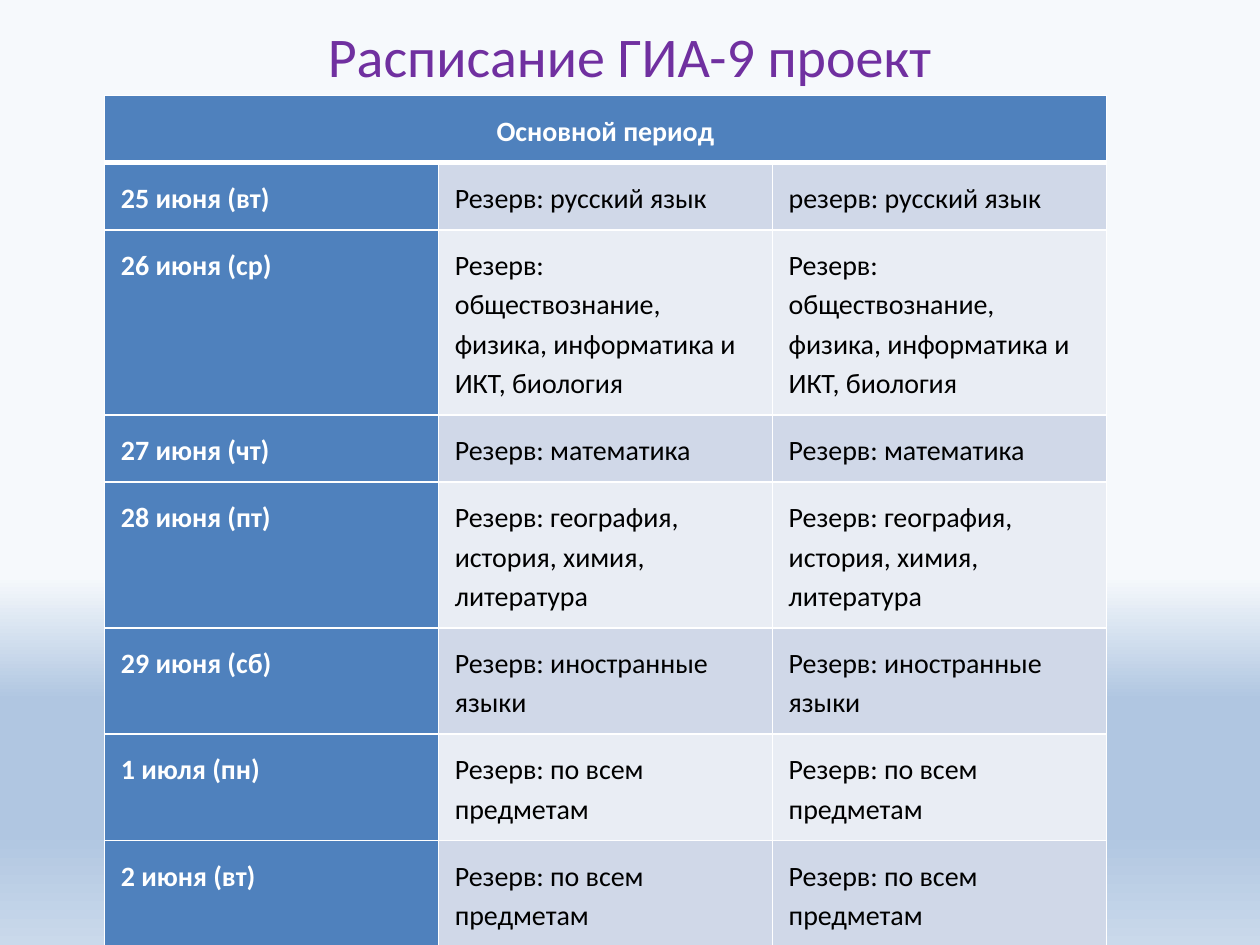
from lxml.etree import SubElement
from pptx import Presentation
from pptx.dml.color import RGBColor
from pptx.enum.text import MSO_ANCHOR, PP_ALIGN
from pptx.oxml import parse_xml
from pptx.oxml.ns import nsdecls, qn
from pptx.util import Inches, Pt

BLUE, WHITE, BLACK, PURPLE = "4F81BD", "FFFFFF", "000000", "7030A0"
BANDS = ["D0D8E8", "E9EDF4"]
GRADIENT = [(61, "F6F9FC"), (74, "B0C6E1"), (88, "B0C6E1"), (100, "CAD9EB")]
MARGINS = {"margin_left": Inches(0.13), "margin_right": Inches(0.13),
           "margin_top": Inches(0.11), "margin_bottom": Inches(0.11)}
SCHEDULE = [
    (0.52, "25 июня (вт)", "Резерв: русский язык", "резерв: русский язык"),
    (1.43, "26 июня (ср)", *["Резерв: обществознание, физика, информатика и ИКТ, биология"] * 2),
    (0.52, "27 июня (чт)", *["Резерв: математика"] * 2),
    (1.13, "28 июня (пт)", *["Резерв: география, история, химия, литература"] * 2),
    (0.82, "29 июня (сб)", *["Резерв: иностранные языки"] * 2),
    (0.82, "1 июля (пн)", *["Резерв: по всем предметам"] * 2),
    (0.82, "2 июня (вт)", *["Резерв: по всем предметам"] * 2),
]
ROWS = [(0.52, "Основной период", "", "")] + SCHEDULE


def write(p, text, size, color, bold=False):
    r = p.add_run()
    r.text = text
    for name, value in {"name": "Calibri", "size": Pt(size), "bold": bold}.items():
        setattr(r.font, name, value)
    r.font.color.rgb = RGBColor.from_string(color)


def set_borders(cell, **widths):
    """Draw white cell borders, widths in points by side (L, R, T, B)."""
    tcPr = cell._tc.get_or_add_tcPr()
    for i, side in enumerate("LRTB"):
        tcPr.insert(i, parse_xml(
            f'<a:ln{side} {nsdecls("a")} w="{Pt(widths.get(side, 1))}"><a:solidFill>'
            f'<a:srgbClr val="{WHITE}"/></a:solidFill></a:ln{side}>'))


prs = Presentation()
prs.slide_width, prs.slide_height = Inches(10), Inches(7.5)
s = prs.slides.add_slide(prs.slide_layouts[5])

# Background gradient, running from top to bottom
fill = s.background.fill
fill.gradient()
fill.gradient_angle = 270
stops = next(s._element.iter(qn("a:gsLst")))
for stop in list(stops):
    stops.remove(stop)
for position, color in GRADIENT:
    stop = SubElement(stops, qn("a:gs"), pos=str(position * 1000))
    SubElement(stop, qn("a:srgbClr"), val=color)

# Title
title = s.shapes.title
box = {"left": 0.5, "top": -0.11, "width": 9, "height": 1.1}
for name, value in box.items():
    setattr(title, name, Inches(value))
tf = title.text_frame
tf.vertical_anchor = MSO_ANCHOR.MIDDLE
tf.paragraphs[0].alignment = PP_ALIGN.CENTER
write(tf.paragraphs[0], "Расписание ГИА-9 проект", 32, PURPLE)

# Timetable
height = sum(row[0] for row in ROWS)
table = s.shapes.add_table(len(ROWS), 3, Inches(0.83), Inches(0.76),
                           Inches(7.95), Inches(height)).table
for i, (row_height, *texts) in enumerate(ROWS):
    table.rows[i].height = Inches(row_height)
    for j, text in enumerate(texts):
        cell = table.cell(i, j)
        heading = i == 0 or j == 0
        for name, value in MARGINS.items():
            setattr(cell, name, value)
        cell.fill.solid()
        cell.fill.fore_color.rgb = RGBColor.from_string(BLUE if heading else BANDS[(i - 1) % 2])
        set_borders(cell, T=3 if i == 1 else 1, B=3 if i == 0 else 1)
        p = cell.text_frame.paragraphs[0]
        p.line_spacing = 1.15
        p.alignment = PP_ALIGN.CENTER if i == 0 else PP_ALIGN.LEFT
        if text:
            write(p, text, 16, WHITE if heading else BLACK, heading)
table.cell(0, 0).merge(table.cell(0, 2))

prs.save("out.pptx")
